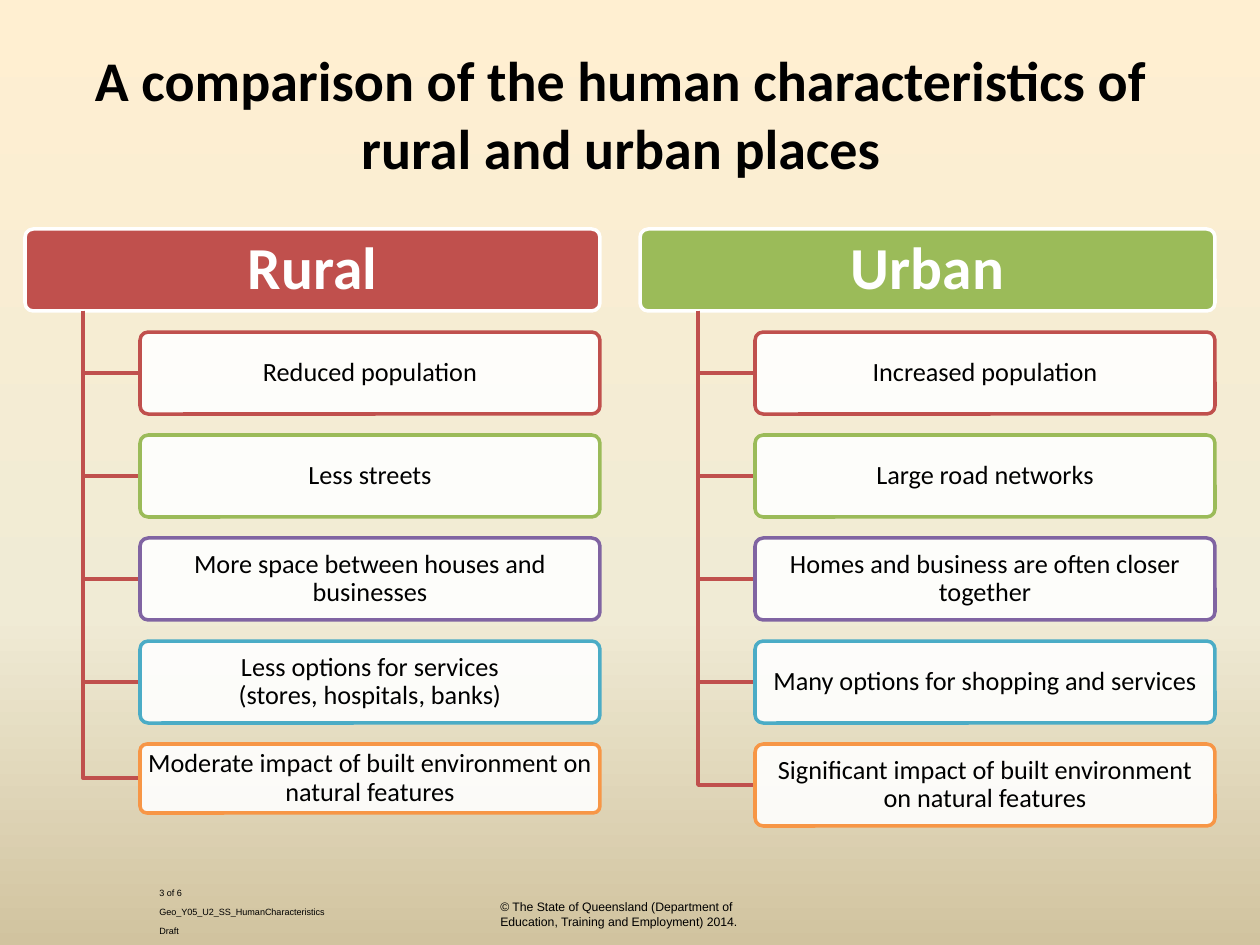
from copy import deepcopy

from lxml.etree import SubElement
from pptx import Presentation
from pptx.dml.color import RGBColor
from pptx.enum.shapes import MSO_SHAPE
from pptx.enum.text import MSO_ANCHOR, PP_ALIGN
from pptx.oxml.ns import qn
from pptx.util import Emu, Pt

BLACK = RGBColor(0x00, 0x00, 0x00)
WHITE = RGBColor(0xFF, 0xFF, 0xFF)
RED = RGBColor(0xC0, 0x50, 0x4D)
GREEN = RGBColor(0x9B, 0xBB, 0x59)
PURPLE = RGBColor(0x80, 0x64, 0xA2)
BLUE = RGBColor(0x4B, 0xAC, 0xC6)
ORANGE = RGBColor(0xF7, 0x96, 0x46)
CREAM = RGBColor(0xFF, 0xEF, 0xD1)
SAND = RGBColor(0xF0, 0xEB, 0xD5)
TAN = RGBColor(0xD1, 0xC3, 0x9F)

ROW_COLORS = [RED, GREEN, PURPLE, BLUE, ORANGE]
COLUMNS = [
    ("Rural", RED, 69, [
        "Reduced population",
        "Less streets",
        "More space between houses and businesses",
        "Less options for services\v(stores, hospitals, banks)",
        "Moderate impact of built environment on natural features",
    ]),
    ("Urban", GREEN, 82, [
        "Increased population",
        "Large road networks",
        "Homes and business are often closer together",
        "Many options for shopping and services",
        "Significant impact of built environment on natural features",
    ]),
]
LEFT, COLUMN_STEP, HEAD_W = 25, 615, 575
HEAD_TOP, BOX_H, ROW_STEP = 229, 82, 103
STEM, INDENT = 58, 115


def px(n):
    return Emu(round(n * 914400 / 126))


class Canvas:
    """Draws styled elements on the current slide."""

    heading_font = "Calibri"
    footer_font = "Arial"
    line_width = Pt(2)

    def __init__(self, slide):
        self.s = slide

    def background(self, stops):
        fill = self.s.background.fill
        fill.gradient()
        fill.gradient_angle = 270
        gs_list = self.s._element.find(".//" + qn("a:gsLst"))
        while len(gs_list) < len(stops):
            gs_list.append(deepcopy(gs_list[0]))
        for stop, (position, color) in zip(fill.gradient_stops, stops):
            stop.position = position
            stop.color.rgb = color

    def set_text(self, tf, lines, size, color=BLACK, bold=False,
                 font=heading_font, align=PP_ALIGN.CENTER, spacing=None):
        tf.word_wrap = True
        tf.text = "\n".join(lines)
        for p in tf.paragraphs:
            p.alignment = align
            p.line_spacing = spacing
            for r in p.runs:
                r.font.name = font
                r.font.size = Pt(size)
                r.font.bold = bold
                r.font.color.rgb = color

    def title(self, x, y, w, h, text):
        tf = self.s.shapes.add_textbox(px(x), px(y), px(w), px(h)).text_frame
        tf.vertical_anchor = MSO_ANCHOR.MIDDLE
        self.set_text(tf, [text], 32, bold=True)

    def footer(self, x, y, w, h, lines, size, baseline=0):
        tf = self.s.shapes.add_textbox(px(x), px(y), px(w), px(h)).text_frame
        self.set_text(tf, lines, size, font=self.footer_font,
                      align=PP_ALIGN.LEFT)
        if baseline:
            for p in tf.paragraphs:
                for r in p.runs:
                    r.font._element.set("baseline", str(baseline * 1000))

    def box(self, x, y, w, h, text, fill, line, size, inset, color=BLACK,
            bold=False, opacity=100):
        sp = self.s.shapes.add_shape(MSO_SHAPE.ROUNDED_RECTANGLE,
                                     px(x), px(y), px(w), px(h))
        sp.shadow.inherit = False
        sp.adjustments[0] = 0.1
        sp.fill.solid()
        sp.fill.fore_color.rgb = fill
        if opacity < 100:
            rgb = sp._element.spPr.find(".//" + qn("a:srgbClr"))
            SubElement(rgb, qn("a:alpha"), val=str(opacity * 1000))
        sp.line.color.rgb = line
        sp.line.width = self.line_width
        tf = sp.text_frame
        tf.margin_left = tf.margin_right = px(inset)
        tf.margin_top = tf.margin_bottom = px(inset - 2)
        tf.vertical_anchor = MSO_ANCHOR.MIDDLE
        self.set_text(tf, [text], size, color, bold, spacing=0.9)

    def elbow(self, x, y, to_x, to_y):
        builder = self.s.shapes.build_freeform(px(x), px(y))
        builder.add_line_segments([(px(x), px(to_y)), (px(to_x), px(to_y))],
                                  close=False)
        sp = builder.convert_to_shape()
        sp.shadow.inherit = False
        sp.fill.background()
        sp.line.color.rgb = RED
        sp.line.width = self.line_width

    def column(self, x, heading, color, last_h, items):
        self.box(x, HEAD_TOP, HEAD_W, BOX_H, heading, color, WHITE, 34, 11,
                 WHITE, True)
        for i, (text, line) in enumerate(zip(items, ROW_COLORS), 1):
            top = HEAD_TOP + i * ROW_STEP
            h = last_h if i == len(items) else BOX_H
            self.elbow(x + STEM, HEAD_TOP + BOX_H, x + INDENT, top + h // 2)
            self.box(x + INDENT, top, HEAD_W - INDENT, h, text, WHITE, line,
                     15, 6, opacity=90)


def main():
    prs = Presentation()
    prs.slide_width, prs.slide_height = px(1260), px(945)
    c = Canvas(prs.slides.add_slide(prs.slide_layouts[6]))
    c.background([(0, CREAM), (0.65, SAND), (1, TAN)])
    c.footer(147, 879, 267, 50,
             ["3 of 6", "Geo_Y05_U2_SS_HumanCharacteristics", "Draft"], 9, 30)
    c.footer(488, 893, 277, 43,
             ["© The State of Queensland (Department of",
              "Education, Training and Employment) 2014."], 7)
    c.title(54, 34, 1134, 158,
            "A comparison of the human characteristics of rural and urban places")
    for i, column in enumerate(COLUMNS):
        c.column(LEFT + i * COLUMN_STEP, *column)
    prs.save("out.pptx")


if __name__ == "__main__":
    main()
